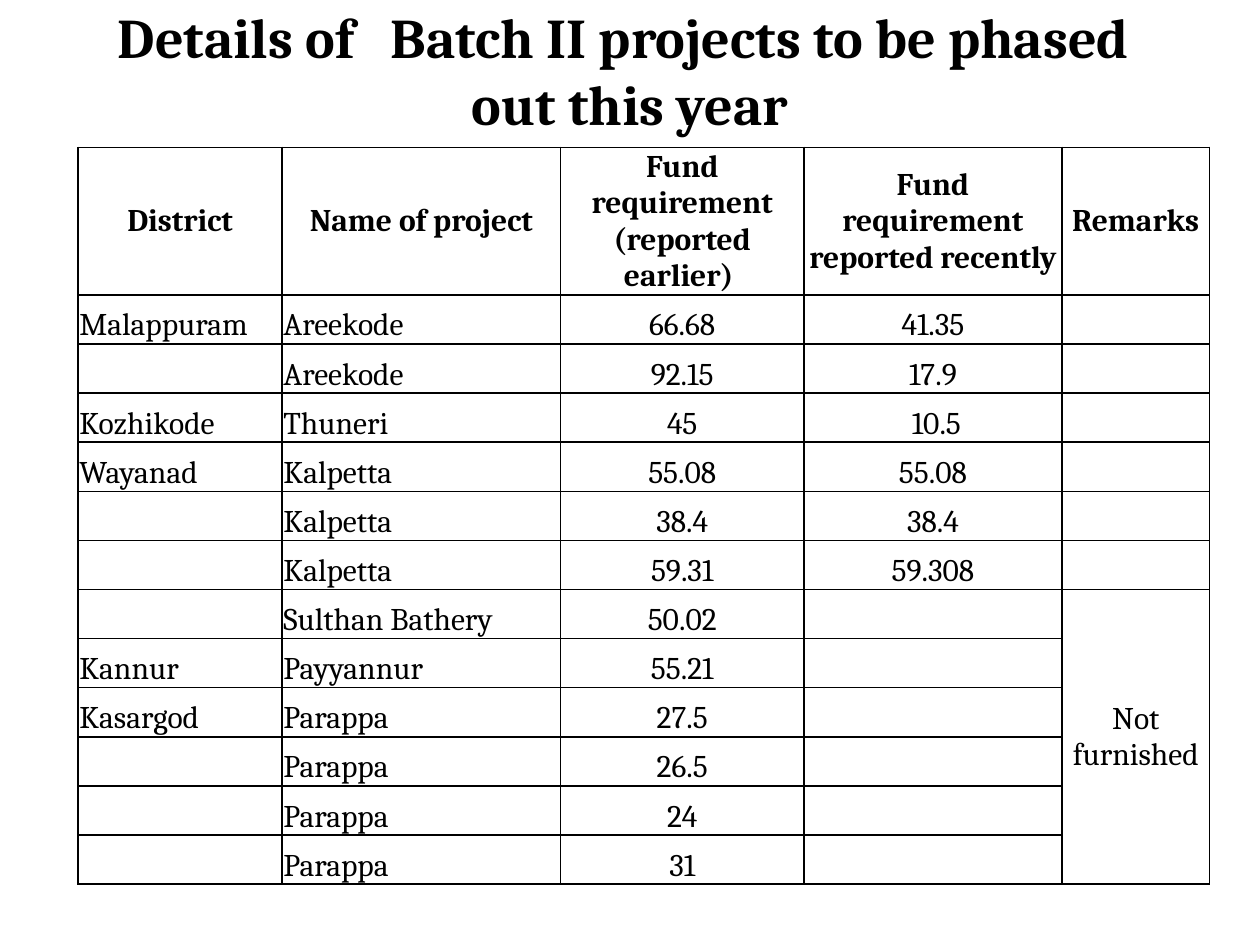
from typing import NamedTuple

from lxml import etree
from pptx import Presentation
from pptx.dml.color import RGBColor
from pptx.enum.text import MSO_ANCHOR, PP_ALIGN
from pptx.oxml.ns import qn
from pptx.util import Inches, Pt

LEFT, CENTER = PP_ALIGN.LEFT, PP_ALIGN.CENTER
MIDDLE, BOTTOM = MSO_ANCHOR.MIDDLE, MSO_ANCHOR.BOTTOM
COLORS = {"ink": "000000", "paper": "FFFFFF"}
FONT = "Cambria"


class Column(NamedTuple):
    head: str
    width: float
    align: PP_ALIGN


class Project(NamedTuple):
    district: str
    name: str
    earlier: str
    recent: str = ""
    remark: str = ""


COLUMNS = [
    Column("District", 1.62, LEFT),
    Column("Name of project", 2.21, LEFT),
    Column("Fund requirement (reported earlier) ", 1.93, CENTER),
    Column("Fund requirement reported recently", 2.05, CENTER),
    Column("Remarks", 1.17, CENTER),
]
PROJECTS = [
    Project("Malappuram", "Areekode", "66.68", "41.35"),
    Project("", "Areekode", "92.15", "17.9"),
    Project("Kozhikode", "Thuneri", "45", " 10.5"),
    Project("Wayanad", "Kalpetta", "55.08", "55.08"),
    Project("", "Kalpetta", "38.4", "38.4"),
    Project("", "Kalpetta", "59.31", "59.308"),
    Project("", "Sulthan Bathery", "50.02", remark="Not furnished"),
    Project("Kannur", "Payyannur", "55.21"),
    Project("Kasargod", "Parappa", "27.5"),
    Project("", "Parappa", "26.5"),
    Project("", "Parappa", "24"),
    Project("", "Parappa", "31"),
]
HEAD_HEIGHT, ROW_HEIGHT = 1.17, 0.39
MERGE_ROW = 7


def style(para, size: int, bold: bool, align: PP_ALIGN) -> None:
    para.alignment = align
    font = para.font
    font.name, font.size, font.bold = FONT, Pt(size), bold
    font.color.rgb = RGBColor.from_string(COLORS["ink"])


def add_borders(cell) -> None:
    props = cell._tc.get_or_add_tcPr()
    for spot, side in enumerate(("lnL", "lnR", "lnT", "lnB")):
        line = etree.Element(qn(f"a:{side}"), w=str(Pt(1)))
        fill = etree.SubElement(line, qn("a:solidFill"))
        etree.SubElement(fill, qn("a:srgbClr"), val=COLORS["ink"])
        props.insert(spot, line)


def fill_cell(cell, text: str, align: PP_ALIGN, anchor: MSO_ANCHOR, bold: bool) -> None:
    cell.text = text
    cell.vertical_anchor = anchor
    cell.margin_left = cell.margin_right = cell.margin_top = Inches(0.01)
    cell.margin_bottom = 0
    cell.fill.solid()
    cell.fill.fore_color.rgb = RGBColor.from_string(COLORS["paper"])
    style(cell.text_frame.paragraphs[0], 18, bold, align)
    add_borders(cell)


def add_projects(slide) -> None:
    width = sum(col.width for col in COLUMNS)
    height = HEAD_HEIGHT + ROW_HEIGHT * len(PROJECTS)
    table = slide.shapes.add_table(
        len(PROJECTS) + 1, len(COLUMNS),
        Inches(0.62), Inches(1.17), Inches(width), Inches(height),
    ).table
    table.first_row = table.horz_banding = False

    # Header and column widths
    table.rows[0].height = Inches(HEAD_HEIGHT)
    for c, col in enumerate(COLUMNS):
        table.columns[c].width = Inches(col.width)
        fill_cell(table.cell(0, c), col.head, CENTER, MIDDLE, True)

    # One row per project
    for r, project in enumerate(PROJECTS, 1):
        table.rows[r].height = Inches(ROW_HEIGHT)
        for c, (col, text) in enumerate(zip(COLUMNS, project)):
            anchor = MIDDLE if col.head == "Remarks" else BOTTOM
            fill_cell(table.cell(r, c), text, col.align, anchor, False)

    # Shared remark
    last = len(COLUMNS) - 1
    table.cell(MERGE_ROW, last).merge(table.cell(len(PROJECTS), last))


def add_title(slide) -> None:
    box = slide.shapes.add_textbox(Inches(0), Inches(0.16), Inches(10), Inches(0.78))
    frame = box.text_frame
    frame.word_wrap = True
    frame.vertical_anchor = MIDDLE
    para = frame.paragraphs[0]
    para.text = "Details of   Batch II projects to be phased \vout this year"
    style(para, 32, True, CENTER)


def main() -> None:
    deck = Presentation()
    deck.slide_width, deck.slide_height = Inches(10), Inches(7.5)
    slide = deck.slides.add_slide(deck.slide_layouts[6])
    add_projects(slide)
    add_title(slide)
    deck.save("out.pptx")


if __name__ == "__main__":
    main()
